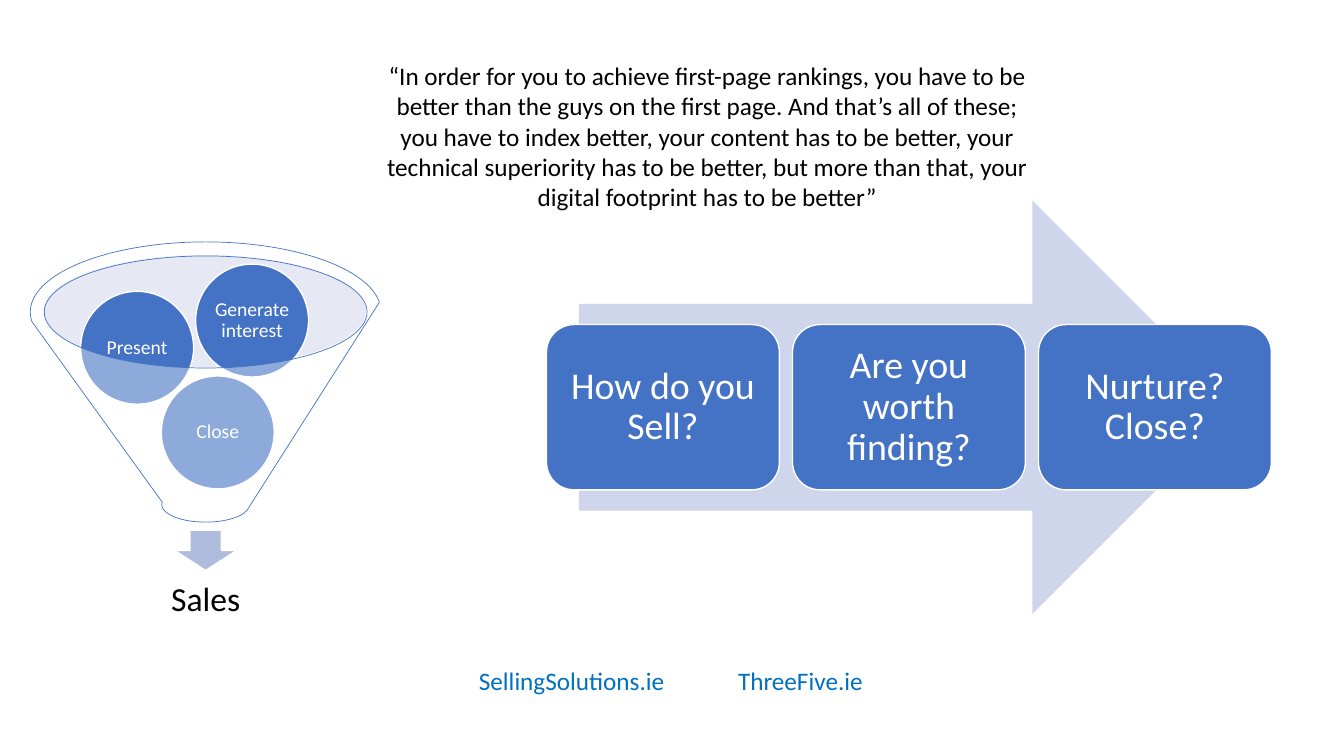
from lxml import etree
from pptx import Presentation
from pptx import util as u
from pptx.dml.color import RGBColor
from pptx.enum import shapes, text
from pptx.oxml.ns import qn

COLOURS = {
    "white": "FFFFFF",
    "black": "000000",
    "blue": "4472C4",
    "rim": "C1C9E4",
    "down": "B0BCDE",
    "arrow": "CFD5EA",
    "link": "0070C0",
}
KINDS = shapes.MSO_SHAPE
ALIGN = text.PP_ALIGN
MIDDLE = text.MSO_ANCHOR.MIDDLE


class SalesSlide:
    """Holds the style and the current slide, and draws its elements."""

    def __init__(self, deck, font="Calibri"):
        self.slide = deck.slides.add_slide(deck.slide_layouts[6])
        self.font = font

    def colour(self, name):
        return RGBColor.from_string(COLOURS[name])

    def set_words(self, holder, words, size, colour, inset=None, spacing=None,
                  align=ALIGN.CENTER, tab=None, **frame_format):
        frame = holder.text_frame
        frame_format["word_wrap"] = True
        if inset is not None:
            for side in ("left", "top", "right", "bottom"):
                frame_format.setdefault(f"margin_{side}", u.Inches(inset))
        for key, value in frame_format.items():
            setattr(frame, key, value)
        frame.text = words
        line = frame.paragraphs[0]
        for key, value in {"alignment": align, "line_spacing": spacing}.items():
            setattr(line, key, value)
        if tab:
            tabs = etree.SubElement(line._p.get_or_add_pPr(), qn("a:tabLst"))
            etree.SubElement(tabs, qn("a:tab"), pos=str(u.Inches(tab)), algn="l")
        for key, value in {"name": self.font, "size": u.Pt(size)}.items():
            setattr(line.runs[0].font, key, value)
        line.runs[0].font.color.rgb = self.colour(colour)

    def label(self, box, words, size, colour, **style):
        holder = self.slide.shapes.add_textbox(*map(u.Inches, box))
        self.set_words(holder, words, size, colour, **style)

    def shape(self, kind, box, fill, line=None, width=1, opacity=None):
        figure = self.slide.shapes.add_shape(kind, *map(u.Inches, box))
        figure.shadow.inherit = False
        figure.fill.solid()
        figure.fill.fore_color.rgb = self.colour(fill)
        if opacity:
            tint = figure._element.spPr.find(qn("a:solidFill"))[0]
            etree.SubElement(tint, qn("a:alpha"), val=str(opacity * 1000))
        if line:
            figure.line.color.rgb = self.colour(line)
            figure.line.width = u.Pt(width)
        else:
            figure.line.fill.background()
        return figure

    def block(self, kind, box, words, size, inset):
        figure = self.shape(kind, box, "blue", line="white")
        self.set_words(figure, words, size, "white", inset=inset, spacing=0.9,
                       vertical_anchor=MIDDLE)


def draw_funnel(page):
    page.shape(KINDS.OVAL, (0.43, 2.53, 3.2, 1.11), "rim", opacity=40)
    page.shape(KINDS.DOWN_ARROW, (1.73, 5.26, 0.62, 0.4), "down", line="white")
    page.label((0.55, 5.58, 2.98, 0.75), "Sales", 24, "black", inset=0.19,
               spacing=0.9, vertical_anchor=MIDDLE)
    ball = 1.12
    for step, left, top in (("Close", 1.6, 3.73), ("Present", 0.8, 2.89),
                            ("Generate interest", 1.94, 2.62)):
        page.block(KINDS.OVAL, (left, top, ball, ball), step, 14, 0.02)
    page.shape(KINDS.FUNNEL, (0.3, 2.4, 3.48, 2.78), "white", line="blue",
               width=0.5, opacity=40)


def draw_process(page):
    page.shape(KINDS.RIGHT_ARROW, (5.74, 1.99, 6.55, 4.1), "arrow")
    questions = ("How do you Sell?", "Are you worth finding?", "Nurture? Close?")
    for index, question in enumerate(questions):
        page.block(KINDS.ROUNDED_RECTANGLE, (5.42 + index * 2.44, 3.22, 2.31, 1.64),
                   question, 27, 0.11)


def main():
    deck = Presentation()
    deck.slide_width, deck.slide_height = u.Inches(13.33), u.Inches(7.5)
    page = SalesSlide(deck)
    page.label((4.42, 6.55, 4.5, 0.4), "SellingSolutions.ie\tThreeFive.ie", 18,
               "link", align=ALIGN.LEFT, tab=2.57, margin_left=u.Inches(0.33),
               vertical_anchor=MIDDLE)
    page.label((3.68, 0.55, 6.67, 1.62),
               "“In order for you to achieve first-page rankings, you have to be "
               "better than the guys on the first page. And that’s all of these; "
               "you have to index better, your content has to be better, your "
               "technical superiority has to be better, but more than that, your "
               "digital footprint has to be better”",
               18, "black", auto_size=text.MSO_AUTO_SIZE.SHAPE_TO_FIT_TEXT)
    draw_funnel(page)
    draw_process(page)
    deck.save("out.pptx")


if __name__ == "__main__":
    main()
